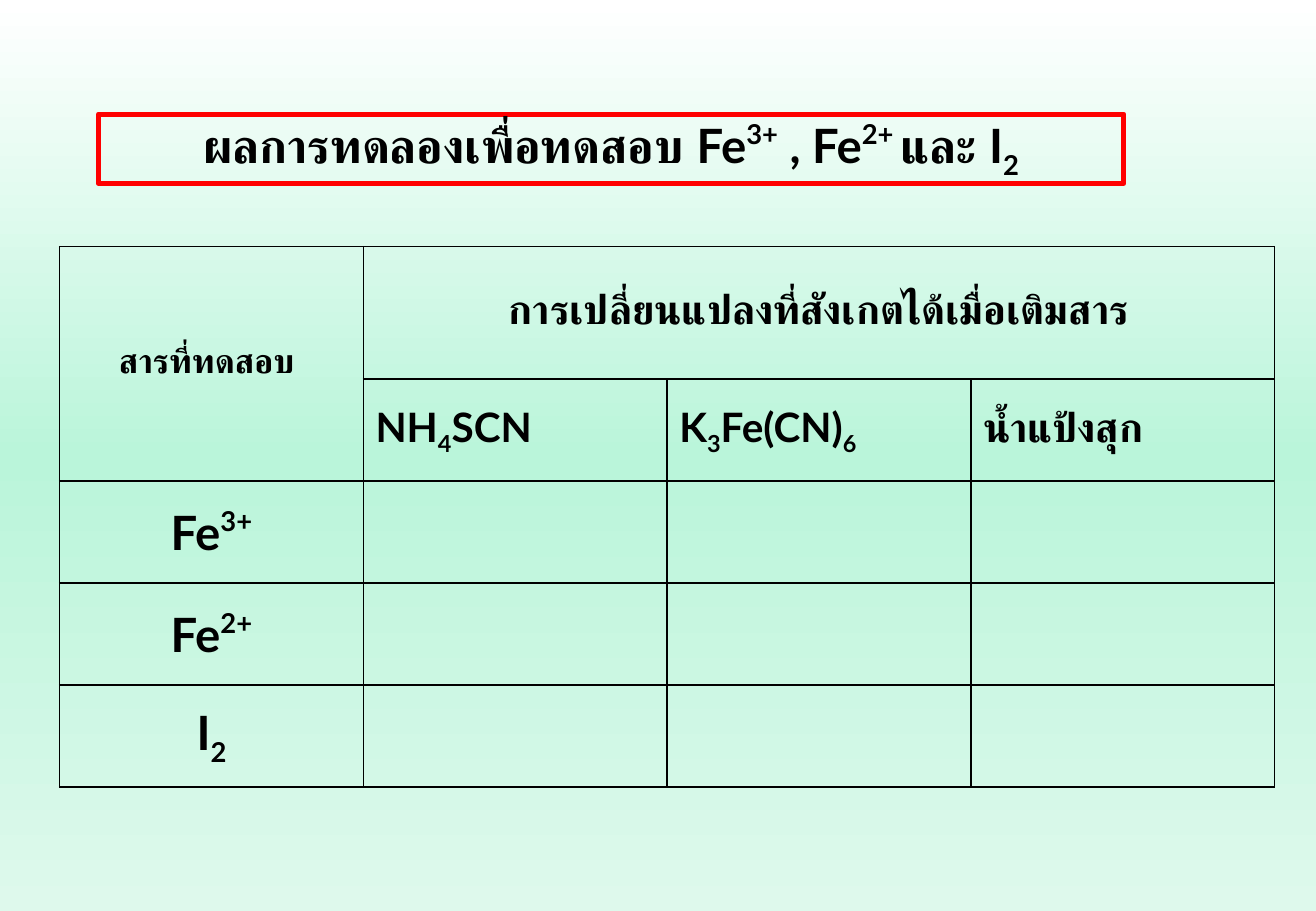
from lxml import etree
from pptx import Presentation
from pptx.dml.color import RGBColor
from pptx.enum.shapes import MSO_SHAPE
from pptx.enum.text import MSO_ANCHOR, PP_ALIGN
from pptx.oxml.ns import qn
from pptx.util import Inches, Pt

RECTANGLE = MSO_SHAPE.RECTANGLE
MIDDLE = MSO_ANCHOR.MIDDLE
LEFT, CENTER = PP_ALIGN.LEFT, PP_ALIGN.CENTER

BLACK = RGBColor(0x00, 0x00, 0x00)
RED = RGBColor(0xFF, 0x00, 0x00)
WHITE = RGBColor(0xFF, 0xFF, 0xFF)
MINT = RGBColor(0xBA, 0xF5, 0xDA)
PALE_MINT = RGBColor(0xDE, 0xF9, 0xEC)

# Baseline shifts in percent
SUPER, SUB = 40, -25

# Each text is a list of (words, baseline shift)
TITLE = [("ผลการทดลองเพื่อทดสอบ Fe", 0), ("3+", SUPER), (" , Fe", 0),
         ("2+ ", SUPER), ("และ I", 0), ("2", SUB)]
SAMPLE_HEADING = [("สารที่ทดสอบ ", 0)]
CHANGE_HEADING = [("การเปลี่ยนแปลงที่สังเกตได้เมื่อเติมสาร", 0)]
REAGENTS = [
    [("NH", 0), ("4", SUB), ("SCN", 0)],
    [("K", 0), ("3", SUB), ("Fe(CN)", 0), ("6", SUB)],
    [("น้ำแป้งสุก", 0)],
]
SAMPLES = [
    [("Fe", 0), ("3+", SUPER)],
    [("Fe", 0), ("2+", SUPER)],
    [("I", 0), ("2", SUB)],
]


def add_solid_color(parent, color):
    etree.SubElement(parent, qn("a:srgbClr"), val=str(color))


class SlideBuilder:
    def __init__(self, slide, font="Lato", color=BLACK):
        self.slide = slide
        self.font = font
        self.color = color

    def background(self, stops):
        fill = self.slide.background.fill
        fill.gradient()
        fill.gradient_angle = 270
        stop_list = next(self.slide.element.iter(qn("a:gsLst")))
        for stop in list(stop_list):
            stop_list.remove(stop)
        for percent, color in stops:
            stop = etree.SubElement(stop_list, qn("a:gs"), pos=str(percent * 1000))
            add_solid_color(stop, color)

    def add_text(self, frame, spans, size, align):
        para = frame.paragraphs[0]
        para.alignment = align
        for words, shift in spans:
            span = para.add_run()
            span.text = words
            span.font.name = self.font
            span.font.size = Pt(size)
            span.font.bold = True
            span.font.color.rgb = self.color
            if shift:
                span.font._element.set("baseline", str(shift * 1000))

    def framed_title(self, left, top, width, height, spans, size):
        box = self.slide.shapes.add_shape(
            RECTANGLE, Inches(left), Inches(top), Inches(width), Inches(height))
        box.shadow.inherit = False
        box.fill.background()
        box.line.color.rgb = RED
        box.line.width = Pt(3)
        frame = box.text_frame
        frame.word_wrap = True
        frame.vertical_anchor = MIDDLE
        self.add_text(frame, spans, size, CENTER)

    def grid(self, left, top, column_widths, row_heights):
        table = self.slide.shapes.add_table(
            len(row_heights), len(column_widths), Inches(left), Inches(top),
            Inches(sum(column_widths)), Inches(sum(row_heights))).table
        table.first_row = False
        table.horz_banding = False
        for column, width in zip(table.columns, column_widths):
            column.width = Inches(width)
        for row, height in zip(table.rows, row_heights):
            row.height = Inches(height)
        for cell in table.iter_cells():
            self.border(cell)
            cell.fill.background()
            cell.vertical_anchor = MIDDLE
        return table

    def border(self, cell):
        properties = cell._tc.get_or_add_tcPr()
        for side in ("a:lnL", "a:lnR", "a:lnT", "a:lnB"):
            line = etree.SubElement(properties, qn(side), w=str(Pt(1)))
            add_solid_color(etree.SubElement(line, qn("a:solidFill")), BLACK)


def main():
    deck = Presentation()
    deck.slide_width = Inches(10.83)
    deck.slide_height = Inches(7.5)
    page = SlideBuilder(deck.slides.add_slide(deck.slide_layouts[6]))
    page.background([(0, WHITE), (50, MINT), (100, PALE_MINT)])

    # Results table with merged headings
    table = page.grid(0.49, 2.03, [2.5] * 4, [1.09] + [0.84] * 4)
    table.cell(0, 0).merge(table.cell(1, 0))
    table.cell(0, 1).merge(table.cell(0, 3))
    page.add_text(table.cell(0, 0).text_frame, SAMPLE_HEADING, 20, CENTER)
    page.add_text(table.cell(0, 1).text_frame, CHANGE_HEADING, 24, CENTER)
    for column, reagent in enumerate(REAGENTS, start=1):
        page.add_text(table.cell(1, column).text_frame, reagent, 24, LEFT)
    for row, sample in enumerate(SAMPLES, start=2):
        page.add_text(table.cell(row, 0).text_frame, sample, 28, CENTER)

    # Title in a red frame
    page.framed_title(0.81, 0.94, 8.44, 0.57, TITLE, 28)

    deck.save("out.pptx")


if __name__ == "__main__":
    main()
